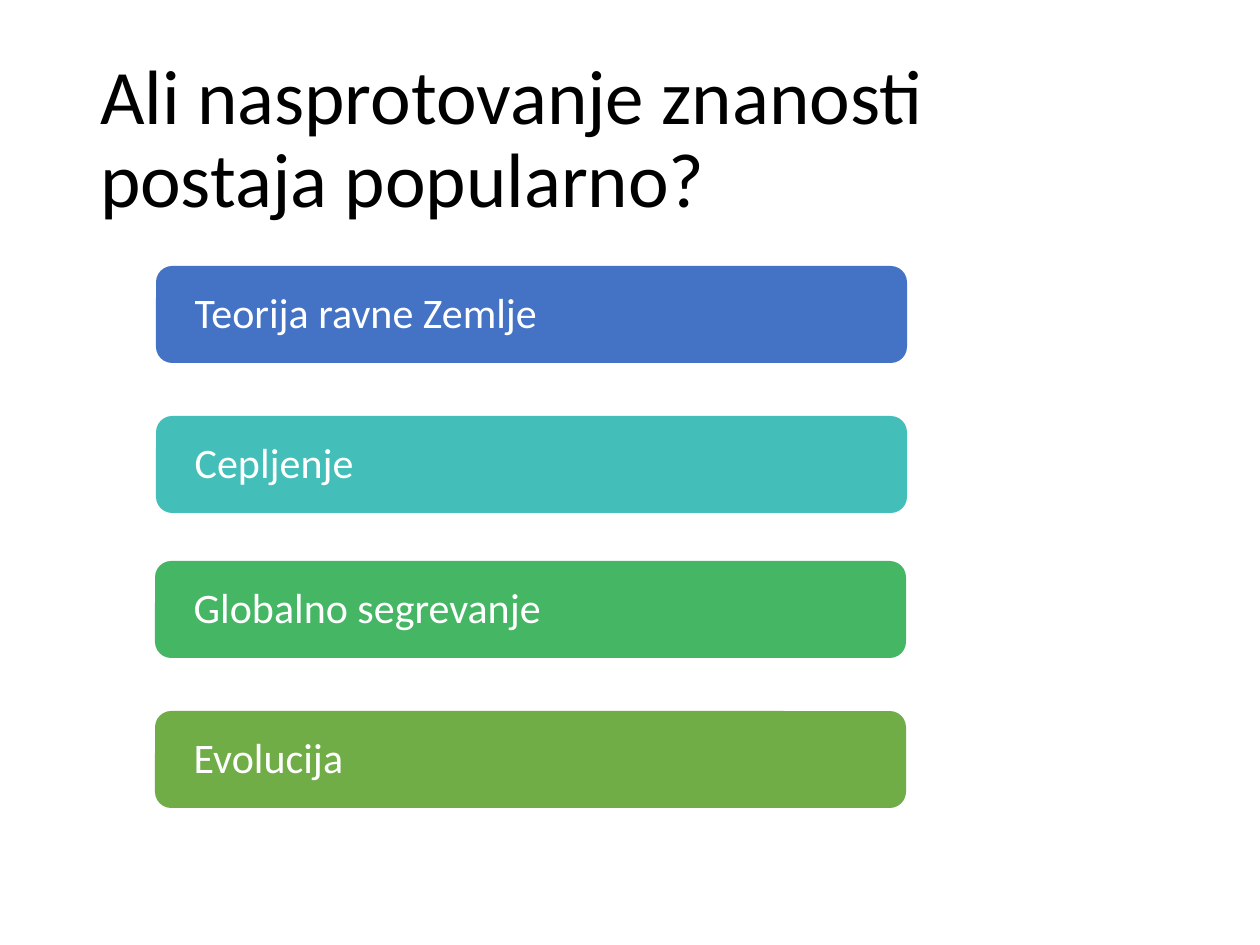
from pptx import Presentation
from pptx.dml.color import RGBColor
from pptx.enum.shapes import MSO_SHAPE as Shape
from pptx.enum.text import MSO_ANCHOR as Anchor, PP_ALIGN as Align
from pptx.util import Pt

EMU_PER_PX = 914400 / 126
COLORS = {
    "title": "000000",
    "label": "FFFFFF",
    "blue": "4472C4",
    "teal": "43BEB9",
    "green": "45B664",
    "olive": "70AD47",
}
BAR_WIDTH, BAR_HEIGHT, BAR_INSET = 751, 97, 34
TOPICS = [
    ("Teorija ravne Zemlje", "blue", 156, 266),
    ("Cepljenje", "teal", 156, 416),
    ("Globalno segrevanje", "green", 155, 561),
    ("Evolucija", "olive", 155, 711),
]


def px(length):
    return round(length * EMU_PER_PX)


def color(name):
    return RGBColor.from_string(COLORS[name])


def set_values(target, values):
    for name, value in values.items():
        setattr(target, name, value)


def write_text(shape, text, size, color_name, inset_x, inset_y):
    """Put one left-aligned, vertically centred paragraph in the shape."""
    frame = shape.text_frame
    set_values(frame, {
        "word_wrap": True,
        "vertical_anchor": Anchor.MIDDLE,
        "margin_left": px(inset_x),
        "margin_right": px(inset_x),
        "margin_top": px(inset_y),
        "margin_bottom": px(inset_y),
    })
    para = frame.paragraphs[0]
    set_values(para, {"alignment": Align.LEFT, "line_spacing": 0.9})
    span = para.add_run()
    span.text = text
    set_values(span.font, {"name": "Calibri", "size": Pt(size)})
    span.font.color.rgb = color(color_name)


def add_title(page, text):
    title = page.shapes.title
    set_values(title, {
        "left": px(87), "top": px(50), "width": px(1086), "height": px(183),
    })
    write_text(title, text, 44, "title", 13, 6)


def add_topic_bar(page, text, fill_name, left, top):
    bar = page.shapes.add_shape(
        Shape.ROUNDED_RECTANGLE,
        px(left), px(top), px(BAR_WIDTH), px(BAR_HEIGHT),
    )
    bar.shadow.inherit = False
    bar.fill.solid()
    bar.fill.fore_color.rgb = color(fill_name)
    bar.line.fill.background()
    write_text(bar, text, 24, "label", BAR_INSET, 0)


def main():
    deck = Presentation()
    set_values(deck, {"slide_width": px(1260), "slide_height": px(945)})
    page = deck.slides.add_slide(deck.slide_layouts[5])
    add_title(page, "Ali nasprotovanje znanosti postaja popularno?")
    for topic in TOPICS:
        add_topic_bar(page, *topic)
    deck.save("out.pptx")


if __name__ == "__main__":
    main()
